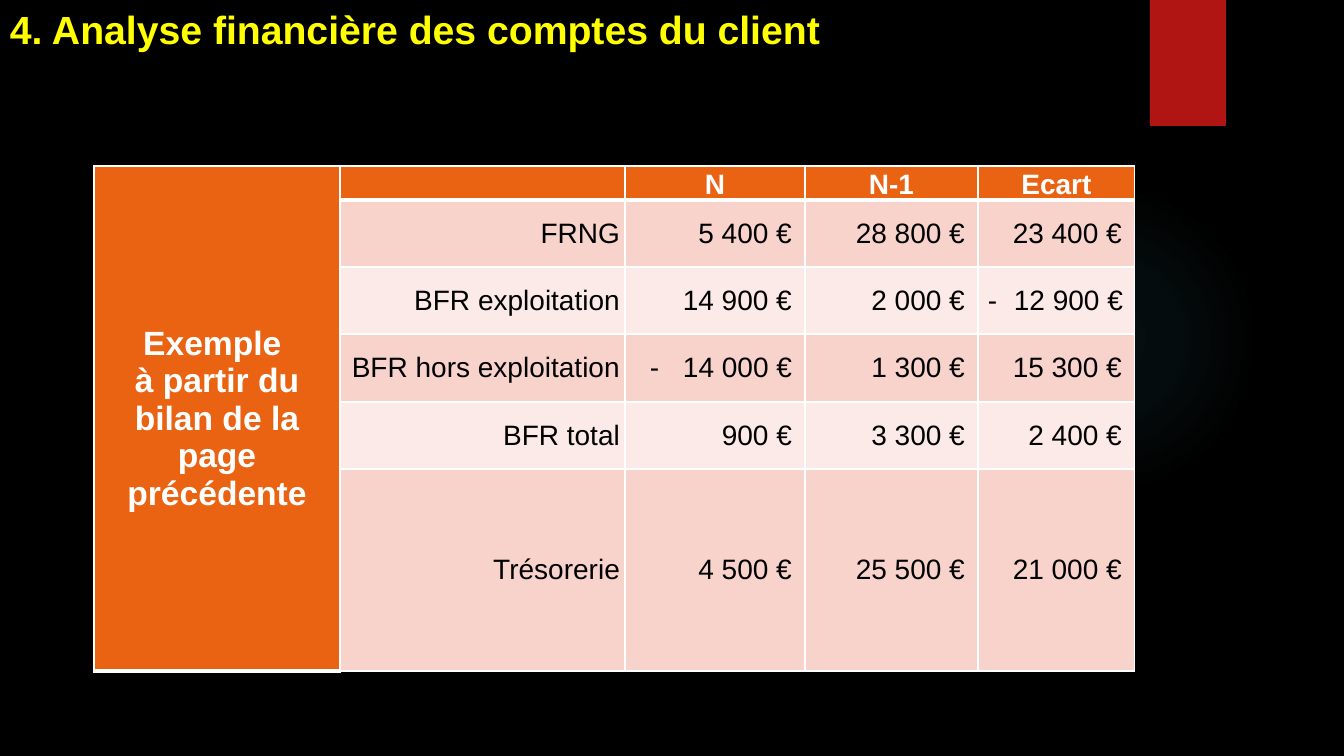
from typing import NamedTuple

from lxml import etree
from pptx import Presentation
from pptx.dml.color import RGBColor
from pptx.enum.shapes import MSO_SHAPE
from pptx.enum.text import MSO_ANCHOR, PP_ALIGN
from pptx.oxml import parse_xml
from pptx.oxml.ns import nsdecls, qn
from pptx.util import Emu, Pt

RECT, OVAL = MSO_SHAPE.RECTANGLE, MSO_SHAPE.OVAL
LEFT, CENTER, RIGHT = PP_ALIGN.LEFT, PP_ALIGN.CENTER, PP_ALIGN.RIGHT
MIDDLE, BOTTOM = MSO_ANCHOR.MIDDLE, MSO_ANCHOR.BOTTOM

BLACK = RGBColor(0x00, 0x00, 0x00)
WHITE = RGBColor(0xFF, 0xFF, 0xFF)
YELLOW = RGBColor(0xFF, 0xFF, 0x00)
RED = RGBColor(0xB0, 0x15, 0x13)
ORANGE = RGBColor(0xEA, 0x63, 0x12)
PINK = RGBColor(0xF7, 0xD3, 0xCC)
PALE_PINK = RGBColor(0xFB, 0xEA, 0xE7)
TEAL = RGBColor(0x50, 0xB9, 0xC1)

FONT = "Arial"
EMU_PER_PX = 914400 / 100.8
COL_WIDTHS = (246, 285, 180, 173, 157)
ROW_HEIGHTS = (34, 67, 67, 68, 67, 202)
HEADERS = ("", "N", "N-1", "Ecart")
EXAMPLE = "Exemple \nà partir du bilan de la page précédente"


class Amount(NamedTuple):
    """Amount with an optional detached minus sign, placed by indent and tab."""

    text: str
    sign_indent: int = 0
    tab: int = 0


class BalanceRow(NamedTuple):
    """Label of a balance line and its three amounts."""

    label: str
    amounts: tuple[Amount, ...]


ROWS = (
    BalanceRow("FRNG", (Amount("5 400 €"), Amount("28 800 €"), Amount("23 400 €"))),
    BalanceRow("BFR exploitation",
               (Amount("14 900 €"), Amount("2 000 €"), Amount("-\t12 900 €", 10, 26))),
    BalanceRow("BFR hors exploitation",
               (Amount("-\t14 000 €", 25, 33), Amount("1 300 €"), Amount("15 300 €"))),
    BalanceRow("BFR total", (Amount("900 €"), Amount("3 300 €"), Amount("2 400 €"))),
    BalanceRow("Trésorerie", (Amount("4 500 €"), Amount("25 500 €"), Amount("21 000 €"))),
)


def px(n: int) -> Emu:
    """Turn pixels into EMU."""
    return Emu(round(n * EMU_PER_PX))


def write(tf, text: str, *, size: int, color: RGBColor, bold: bool = False,
          align=LEFT, tab: int = 0) -> None:
    """Write one paragraph per line of text in the given format."""
    for i, line in enumerate(text.split("\n")):
        p = tf.paragraphs[0] if i == 0 else tf.add_paragraph()
        p.alignment = align
        if tab:
            tabs = etree.SubElement(p._p.get_or_add_pPr(), qn("a:tabLst"))
            etree.SubElement(tabs, qn("a:tab"), pos=str(px(tab)), algn="l")
        r = p.add_run()
        r.text = line
        r.font.name, r.font.size, r.font.bold = FONT, Pt(size), bold
        r.font.color.rgb = color


def add_plain_shape(slide, kind, left: int, top: int, width: int, height: int, color: RGBColor):
    """Add a filled shape without line or shadow."""
    sp = slide.shapes.add_shape(kind, px(left), px(top), px(width), px(height))
    sp.shadow.inherit = False
    sp.line.fill.background()
    sp.fill.solid()
    sp.fill.fore_color.rgb = color
    return sp


def add_glow(slide) -> None:
    """Add the faint round glow."""
    sp = add_plain_shape(slide, OVAL, 949, 184, 310, 310, TEAL)
    stops = "".join(
        f'<a:gs pos="{pos}000"><a:srgbClr val="{TEAL}"><a:alpha val="{alpha}000"/></a:srgbClr></a:gs>'
        for pos, alpha in ((0, 7), (36, 6), (69, 0)))
    grad = parse_xml(
        f'<a:gradFill {nsdecls("a")}><a:gsLst>{stops}</a:gsLst><a:path path="circle">'
        '<a:fillToRect l="50000" t="50000" r="50000" b="50000"/></a:path></a:gradFill>')
    sppr = sp._element.spPr
    sppr.replace(sppr.find(qn("a:solidFill")), grad)


def add_ribbon(slide) -> None:
    """Add the red ribbon with its soft shadow."""
    sp = add_plain_shape(slide, RECT, 1150, 0, 76, 126, RED)
    sp._element.spPr.find(qn("a:effectLst")).append(parse_xml(
        f'<a:outerShdw {nsdecls("a")} blurRad="{Pt(3)}" dist="{Pt(2)}" dir="5400000">'
        f'<a:srgbClr val="{BLACK}"><a:alpha val="45000"/></a:srgbClr></a:outerShdw>'))


def style_cell(cell, fill: RGBColor, bottom: int = 1, top: int = 1) -> None:
    """Set fill, white borders, insets and anchor of a cell."""
    cell.fill.solid()
    cell.fill.fore_color.rgb = fill
    cell.margin_left = cell.margin_right = px(5)
    cell.margin_top = cell.margin_bottom = 0
    cell.vertical_anchor = MIDDLE
    tcpr = cell._tc.get_or_add_tcPr()
    for i, (side, width) in enumerate((("L", 1), ("R", 1), ("T", top), ("B", bottom))):
        tcpr.insert(i, parse_xml(
            f'<a:ln{side} {nsdecls("a")} w="{Pt(width)}"><a:solidFill>'
            f'<a:srgbClr val="{WHITE}"/></a:solidFill></a:ln{side}>'))


def add_balance_table(slide) -> None:
    """Add the table of balance figures."""
    frame = slide.shapes.add_table(len(ROW_HEIGHTS), len(COL_WIDTHS), px(94), px(166),
                                   px(sum(COL_WIDTHS)), px(sum(ROW_HEIGHTS)))
    table = frame.table
    for col, width in zip(table.columns, COL_WIDTHS):
        col.width = px(width)
    for row, height in zip(table.rows, ROW_HEIGHTS):
        row.height = px(height)

    for i in range(len(ROW_HEIGHTS)):
        style_cell(table.cell(i, 0), ORANGE, bottom=3)
    table.cell(0, 0).merge(table.cell(len(ROWS), 0))
    write(table.cell(0, 0).text_frame, EXAMPLE, size=24, color=WHITE, bold=True, align=CENTER)

    for j, header in enumerate(HEADERS, 1):
        cell = table.cell(0, j)
        style_cell(cell, ORANGE, bottom=3)
        cell.vertical_anchor = BOTTOM
        if header:
            write(cell.text_frame, header, size=20, color=WHITE, bold=True, align=CENTER)

    for i, row in enumerate(ROWS, 1):
        for j, amount in enumerate((Amount(row.label), *row.amounts), 1):
            cell = table.cell(i, j)
            style_cell(cell, PINK if i % 2 else PALE_PINK, top=3 if i == 1 else 1)
            if amount.tab:
                cell.margin_left = px(amount.sign_indent)
            elif j > 1:
                cell.margin_right = px(13)
            write(cell.text_frame, amount.text, size=20, color=BLACK,
                  align=LEFT if amount.tab else RIGHT, tab=amount.tab)


def main() -> None:
    """Build the slide and save it."""
    prs = Presentation()
    prs.slide_width, prs.slide_height = px(1344), px(756)
    slide = prs.slides.add_slide(prs.slide_layouts[6])
    slide.background.fill.solid()
    slide.background.fill.fore_color.rgb = BLACK
    add_glow(slide)
    add_ribbon(slide)
    title = slide.shapes.add_textbox(0, 0, px(1176), px(57))
    title.text_frame.word_wrap = True
    write(title.text_frame, "4. Analyse financière des comptes du client",
          size=28, color=YELLOW, bold=True)
    add_balance_table(slide)
    prs.save("out.pptx")


if __name__ == "__main__":
    main()
